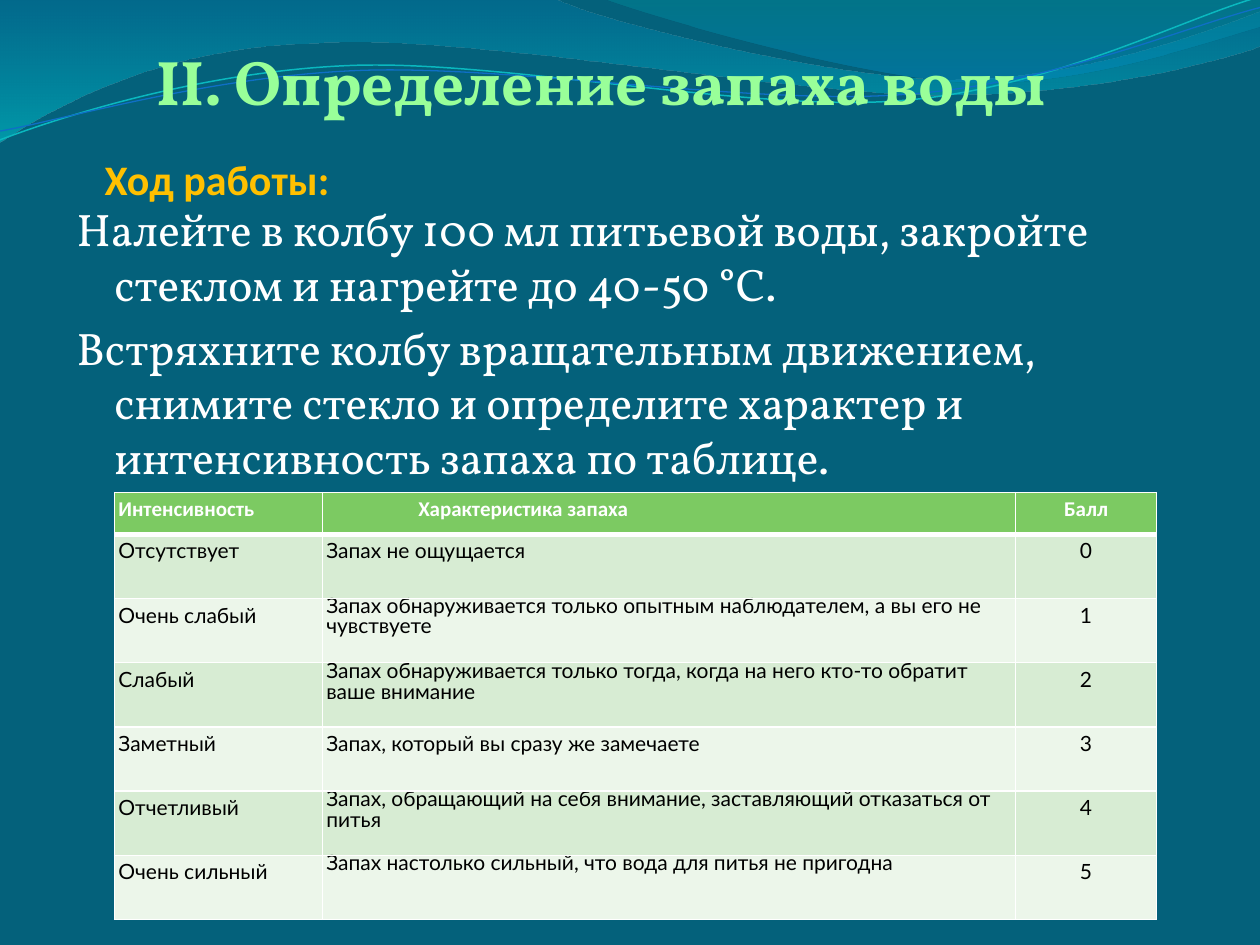
from dataclasses import dataclass
from math import cos, radians, sin

from lxml import etree
from pptx import Presentation
from pptx.dml.color import RGBColor as RGB
from pptx.enum.text import MSO_ANCHOR as Anchor, MSO_AUTO_SIZE as Fit, PP_ALIGN as Align
from pptx.oxml.ns import qn
from pptx.util import Pt

PX = 9144  # 100 px to the inch


@dataclass(frozen=True)
class Theme:
    back: str = "04617B"
    white: str = "FFFFFF"
    black: str = "000000"
    gold: str = "FFC000"
    lime: str = "99FF99"
    head: str = "7CCA62"
    bands: tuple = ("D7ECD3", "ECF6EA")
    serif: str = "Vollkorn"
    sans: str = "Calibri"
    cell: str = "Lato"
    big: float = 36
    body: float = 26
    title: float = 24
    small: float = 12


T = Theme()
TILT = 357.3

# Each wave is a start point, then lines (2 numbers) and curves (6 numbers).
FILLS = [
    ([(0, 0), (440, -1), (476, 17, 664, 63, 758, 63),
      (853, 63, 958, 26, 1000, 9), (1001, 36),
      (983, 44, 870, 76, 746, 75), (622, 75, 382, 28, 257, 34),
      (129, 36, 46, 83, -1, 113), (0, 0)],
     [(0, "0074A1", 45), (100, "00C6CF", 55)]),
    ([(479, -1), (509, 11, 682, 62, 769, 65),
      (856, 69, 961, 32, 1000, 21), (1000, 0), (479, -1)],
     [(0, "00A1A9", 30), (80, "008BBF", 45)]),
]
LINES = [
    ([(0, 111), (48, 93, 158, 57, 277, 52),
      (395, 47, 593, 89, 713, 80), (833, 71, 938, 15, 998, -2)], "0AB8BF", 0.85),
    ([(0, 104), (47, 96, 164, 61, 283, 56),
      (403, 51, 597, 84, 717, 75), (836, 67, 941, 21, 1000, 6)], "0F6FC6", 0.75),
]
STEPS = [
    "Налейте в колбу 100 мл питьевой воды, закройте стеклом и нагрейте до 40-50 °С.",
    "Встряхните колбу вращательным движением, снимите стекло и определите "
    "характер и интенсивность запаха по таблице.",
]
HEADS = ("Интенсивность", "Характеристика запаха", "Балл")
# Name, description, line spacing of the description
SMELLS = [
    ("Отсутствует", "Запах не ощущается", 1.15),
    ("Очень слабый", "Запах обнаруживается только опытным наблюдателем, "
     "а вы его не чувствуете", Pt(11.3)),
    ("Слабый", "Запах обнаруживается только тогда, когда на него кто-то "
     "обратит ваше внимание", Pt(11.8)),
    ("Заметный", "Запах, который вы сразу же замечаете", 1.15),
    ("Отчетливый", "Запах, обращающий на себя внимание, заставляющий "
     "отказаться от питья", Pt(11.5)),
    ("Очень сильный", "Запах настолько сильный, что вода для питья не пригодна", Pt(11.3)),
]


def px(*nums):
    return [round(n * PX) for n in nums]


def style(para, font, size, color, bold=False):
    for run in para.runs:
        run.font.name, run.font.size, run.font.bold = font, Pt(size), bold
        run.font.color.rgb = RGB.from_string(color)


def turn(point, angle, mid=(499, 57)):
    x, y = point[0] - mid[0], point[1] - mid[1]
    c, s = cos(radians(angle)), sin(radians(angle))
    return mid[0] + x * c - y * s, mid[1] + x * s + y * c


def add_wave(slide, parts, tilt=0):
    """Draw a path through all points, then join each curve's three into one."""
    points = [p[i:i + 2] for p in parts for i in range(0, len(p), 2)]
    points = [tuple(px(*turn(p, -tilt))) for p in points]
    pen = slide.shapes.build_freeform(*points[0], scale=1.0)
    pen.add_line_segments(points[1:], close=parts[0] == parts[-1])
    wave = pen.convert_to_shape()
    steps = iter(list(wave._element.iter(qn("a:lnTo"))))
    for part in parts[1:]:
        step = next(steps)
        if len(part) == 6:
            step.tag = qn("a:cubicBezTo")
            curve = etree.Element(step.tag)
            step.getparent().replace(step, curve)
            for item in (step, next(steps), next(steps)):
                curve.append(item[0])
                if item.getparent() is not None:
                    item.getparent().remove(item)
    wave.rotation = tilt
    wave.shadow.inherit = False
    wave.fill.background()
    wave.line.fill.background()
    return wave


def add_fill(slide, parts, stops):
    """Add a closed wave with a see-through gradient from top to bottom."""
    wave = add_wave(slide, parts)
    old = wave._element.spPr.find(qn("a:noFill"))
    grad = etree.Element(qn("a:gradFill"), rotWithShape="1")
    items = etree.SubElement(grad, qn("a:gsLst"))
    for pos, color, alpha in stops:
        stop = etree.SubElement(items, qn("a:gs"), pos=str(pos * 1000))
        tone = etree.SubElement(stop, qn("a:srgbClr"), val=color)
        etree.SubElement(tone, qn("a:alpha"), val=str(alpha * 1000))
    etree.SubElement(grad, qn("a:lin"), ang="5400000", scaled="0")
    old.getparent().replace(old, grad)


def add_line(slide, parts, color, width):
    line = add_wave(slide, parts, TILT).line
    line.color.rgb = RGB.from_string(color)
    line.width = Pt(width)


def set_title(slide):
    box = slide.shapes.title
    box.left, box.top, box.width, box.height = px(83, 131, 299, 71)
    frame = box.text_frame
    frame.text = "Ход работы:\v"
    frame.auto_size, frame.vertical_anchor = Fit.NONE, Anchor.BOTTOM
    frame.margin_left, frame.margin_top, frame.margin_right, frame.margin_bottom = px(0, 5, 0, 0)
    para = frame.paragraphs[0]
    para.alignment = Align.LEFT
    style(para, T.sans, T.title, T.gold, True)
    size = str(round(T.title * 100))
    etree.SubElement(para._p.find(qn("a:br")), qn("a:rPr"), sz=size)
    etree.SubElement(para._p, qn("a:endParaRPr"), sz=size)


def add_steps(slide):
    frame = slide.shapes.add_textbox(*px(51, 155, 907, 514)).text_frame
    frame.word_wrap = True
    frame.text = "\n".join(STEPS)
    hang = px(30)[0]
    for para in frame.paragraphs:
        para.space_before, para.line_spacing = Pt(5.2), Pt(31.2)
        props = para._p.get_or_add_pPr()
        props.set("marL", str(hang))
        props.set("indent", str(-hang))
        style(para, T.serif, T.body, T.white)


def add_head(slide):
    frame = slide.shapes.add_textbox(*px(114, 29, 735, 71)).text_frame
    frame.word_wrap = False
    frame.text = "II. Определение запаха воды"
    style(frame.paragraphs[0], T.serif, T.big, T.lime, True)


def edge(cell, widths):
    """Draw white borders; widths are left, right, top and bottom."""
    props = cell._tc.get_or_add_tcPr()
    for side, width in zip("LRTB", widths):
        line = etree.SubElement(props, qn(f"a:ln{side}"), w=str(Pt(width)))
        fill = etree.SubElement(line, qn("a:solidFill"))
        etree.SubElement(fill, qn("a:srgbClr"), val=T.white)


def add_table(slide):
    rows = [(*HEADS, 1.15)]
    rows += [(name, text, str(i), gap) for i, (name, text, gap) in enumerate(SMELLS)]
    table = slide.shapes.add_table(len(rows), 3, *px(91, 391, 827, 339)).table
    table.first_row = table.horz_banding = False
    for col, width in zip(table.columns, px(165, 550, 112)):
        col.width = width
    for r, (*texts, gap) in enumerate(rows):
        top = r == 0
        table.rows[r].height = px(33 if top else 51)[0]
        for c, text in enumerate(texts):
            cell = table.cell(r, c)
            edge(cell, (1, 1, 3 if r == 1 else 1, 3 if top else 1))
            cell.fill.solid()
            cell.fill.fore_color.rgb = RGB.from_string(T.head if top else T.bands[(r - 1) % 2])
            cell.margin_left = cell.margin_right = px(3)[0]
            cell.margin_top = cell.margin_bottom = 0
            cell.text_frame.text = text
            para = cell.text_frame.paragraphs[0]
            para.line_spacing = gap if c == 1 else 1.15
            para.alignment = Align.CENTER if c == 2 else Align.LEFT
            look = (T.sans, T.small, T.white, True) if top else (T.cell, T.small, T.black)
            style(para, *look)
    head = table.cell(0, 1).text_frame.paragraphs[0]
    head._p.get_or_add_pPr().set("marL", str(px(73)[0]))


def main():
    deck = Presentation()
    deck.slide_width, deck.slide_height = px(1000, 750)
    slide = deck.slides.add_slide(deck.slide_layouts[5])
    slide.background.fill.solid()
    slide.background.fill.fore_color.rgb = RGB.from_string(T.back)
    for wave in FILLS:
        add_fill(slide, *wave)
    for wave in LINES:
        add_line(slide, *wave)
    set_title(slide)
    add_steps(slide)
    add_head(slide)
    add_table(slide)
    deck.save("out.pptx")


if __name__ == "__main__":
    main()
